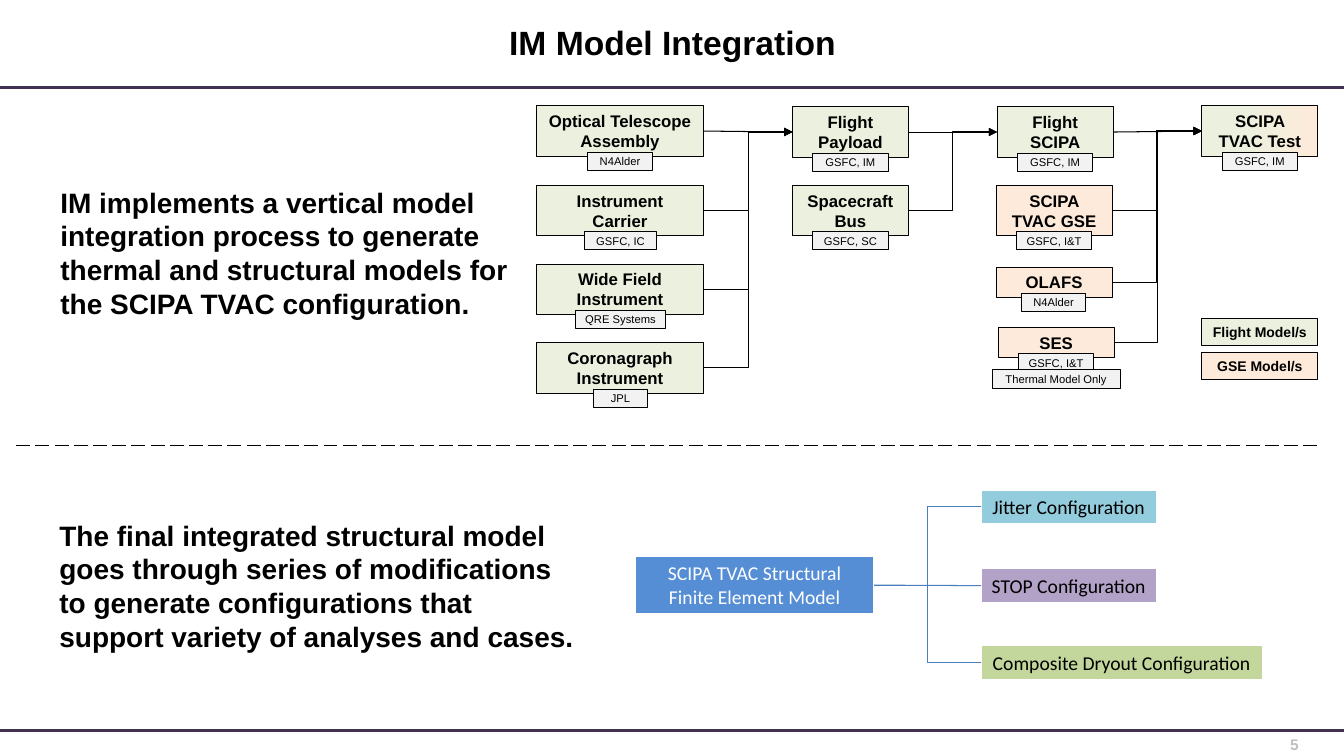
"""Builds the IM Model Integration slide."""
from lxml import etree
from pptx import Presentation
from pptx import util as u
from pptx.dml.color import RGBColor
from pptx.enum import dml, shapes, text
from pptx.oxml import ns

PX = 9144
BLACK = RGBColor(0x00, 0x00, 0x00)
WHITE = RGBColor(0xFF, 0xFF, 0xFF)
GREY = RGBColor(0xBF, 0xBF, 0xBF)
PLUM = RGBColor(0x40, 0x31, 0x52)
FLIGHT = RGBColor(0xEB, 0xF1, 0xDE)
GSE = RGBColor(0xFD, 0xEA, 0xDA)
TAG = RGBColor(0xF2, 0xF2, 0xF2)
BLUE = RGBColor(0x55, 0x8E, 0xD5)
LINK = RGBColor(0x4B, 0x7E, 0xBC)
AQUA = RGBColor(0x93, 0xCD, 0xDD)
VIOLET = RGBColor(0xB3, 0xA2, 0xC7)
GREEN = RGBColor(0xC3, 0xD6, 0x9B)
TOP, MIDDLE = text.MSO_ANCHOR.TOP, text.MSO_ANCHOR.MIDDLE
LEFT, CENTER, RIGHT = text.PP_ALIGN.LEFT, text.PP_ALIGN.CENTER, text.PP_ALIGN.RIGHT
STRAIGHT, ELBOW = shapes.MSO_CONNECTOR.STRAIGHT, shapes.MSO_CONNECTOR.ELBOW


class Deck:
    def __init__(self):
        self.prs = Presentation()
        self.prs.slide_width, self.prs.slide_height = u.Inches(13.33), u.Inches(7.5)
        self.s = self.prs.slides.add_slide(self.prs.slide_layouts[5])

    def label(self, sp, words, size, bold=True, font="Arial", color=BLACK,
              align=CENTER, anchor=TOP, wrap=True, margins=(10, 5)):
        tf = sp.text_frame
        tf.text = words
        tf.word_wrap = wrap
        tf.auto_size = text.MSO_AUTO_SIZE.NONE
        tf.vertical_anchor = anchor
        tf.margin_left = tf.margin_right = margins[0] * PX
        tf.margin_top = tf.margin_bottom = margins[1] * PX
        for p in tf.paragraphs:
            p.alignment = align
            for r in p.runs:
                r.font.name, r.font.size, r.font.bold = font, u.Pt(size), bold
                r.font.color.rgb = color

    def title(self, words, x, y, w, h):
        sp = self.s.shapes.title
        sp.left, sp.top, sp.width, sp.height = (v * PX for v in (x, y, w, h))
        self.label(sp, words, 24, anchor=MIDDLE)

    def textbox(self, words, x, y, w, h, size=20, **style):
        sp = self.s.shapes.add_textbox(*(v * PX for v in (x, y, w, h)))
        self.label(sp, words, size, **style)

    def box(self, words, x, y, w, h, fill, size=12, line=BLACK, weight=0.75, **style):
        sp = self.s.shapes.add_shape(
            shapes.MSO_SHAPE.RECTANGLE, *(v * PX for v in (x, y, w, h)))
        sp.shadow.inherit = False
        sp.fill.solid()
        sp.fill.fore_color.rgb = fill
        sp.line.color.rgb = line
        sp.line.width = u.Pt(weight)
        self.label(sp, words, size, **style)
        return sp

    def tag(self, words, center, y, w):
        self.box(words, center - w // 2, y, w, 18, TAG, 8, bold=False,
                 wrap=False, margins=(10, 2))

    def blend(self, sp, start, end):
        sp.fill.gradient()
        sp.fill.gradient_angle = 0
        for stop, color, position in zip(sp.fill.gradient_stops, (start, end), (0.32, 1)):
            stop.color.rgb = color
            stop.position = position

    def line(self, x1, y1, x2, y2, color=BLACK, weight=0.75, kind=STRAIGHT, dash=None):
        cx = self.s.shapes.add_connector(kind, *(v * PX for v in (x1, y1, x2, y2)))
        cx.line.color.rgb = color
        cx.line.width = u.Pt(weight)
        if dash:
            cx.line.dash_style = dash
        etree.SubElement(cx._element.spPr, ns.qn("a:effectLst"))
        return cx

    def join(self, start, end, kind=ELBOW, color=BLACK, arrow=True):
        cx = self.line(0, 0, 1, 1, color, kind=kind)
        cx.begin_connect(start, 3)
        cx.end_connect(end, 1)
        if arrow:
            ln = cx._element.spPr.find(ns.qn("a:ln"))
            etree.SubElement(ln, ns.qn("a:tailEnd"), type="triangle")


def model_flow(d):
    models = [
        ("Optical Telescope Assembly", 532, 105, 166, 50, FLIGHT, "N4Alder", 64),
        ("Instrument\nCarrier", 532, 184, 166, 50, FLIGHT, "GSFC, IC", 71),
        ("Wide Field Instrument", 532, 262, 166, 50, FLIGHT, "QRE Systems", 89),
        ("Coronagraph Instrument", 532, 340, 166, 50, FLIGHT, "JPL", 53),
        ("Flight\nPayload", 786, 106, 115, 50, FLIGHT, "GSFC, IM", 75),
        ("Spacecraft\nBus", 786, 184, 115, 50, FLIGHT, "GSFC, SC", 75),
        ("Flight\nSCIPA", 989, 106, 115, 50, FLIGHT, "GSFC, IM", 75),
        ("SCIPA TVAC GSE", 988, 184, 115, 50, GSE, "GSFC, I&T", 75),
        ("OLAFS", 988, 265, 115, 30, GSE, "N4Alder", 64),
        ("SES", 990, 325, 115, 30, GSE, "GSFC, I&T", 75),
        ("SCIPA TVAC Test", 1192, 105, 115, 50, FLIGHT, "GSFC, IM", 75),
    ]
    boxes = [d.box(*model[:6]) for model in models]
    payload, scipa, test = boxes[4], boxes[6], boxes[10]
    d.blend(test, FLIGHT, GSE)
    for sources, target in ((boxes[:4], payload), (boxes[4:6], scipa), (boxes[6:10], test)):
        for i, source in enumerate(sources):
            d.join(source, target, ELBOW if i else STRAIGHT)
    for name, x, y, w, h, fill, owner, tag_w in models:
        d.tag(owner, x + w // 2, y + h - 4, tag_w)
    d.tag("Thermal Model Only", 1047, 367, 127)
    d.box("Flight Model/s", 1192, 316, 115, 27, FLIGHT, 10)
    d.box("GSE Model/s", 1192, 350, 115, 27, GSE, 10)


def configurations(d):
    style = dict(size=14, line=WHITE, weight=1, bold=False, font="Calibri")
    model = d.box("SCIPA TVAC Structural\nFinite Element Model", 630, 552, 237, 57,
                  BLUE, color=WHITE, **style)
    for name, y, w, fill, kind in (
            ("Jitter Configuration", 486, 174, AQUA, ELBOW),
            ("STOP Configuration", 564, 174, VIOLET, STRAIGHT),
            ("Composite Dryout Configuration", 640, 279, GREEN, ELBOW)):
        sp = d.box(name, 973, y, w, 34, fill, anchor=MIDDLE, wrap=False, **style)
        d.join(model, sp, kind, LINK, arrow=False)


def main():
    d = Deck()
    d.title("IM Model Integration", 117, 9, 1100, 66)
    for y in (87, 725):
        d.line(0, y, 1333, y, PLUM, 2)
    d.textbox("5", 1200, 726, 95, 25, 11, color=GREY, align=RIGHT, margins=(7, 3))
    d.textbox("IM implements a vertical model integration process to generate thermal "
              "and structural models for the SCIPA TVAC configuration.",
              50, 169, 466, 163, align=LEFT, anchor=MIDDLE)
    model_flow(d)
    d.line(16, 442, 1307, 442, weight=1.25, dash=dml.MSO_LINE.LONG_DASH)
    d.textbox("The final integrated structural model goes through series of modifications "
              "to generate configurations that support variety of analyses and cases.",
              49, 491, 540, 180, align=LEFT, anchor=MIDDLE)
    configurations(d)
    d.prs.save("out.pptx")


if __name__ == "__main__":
    main()
